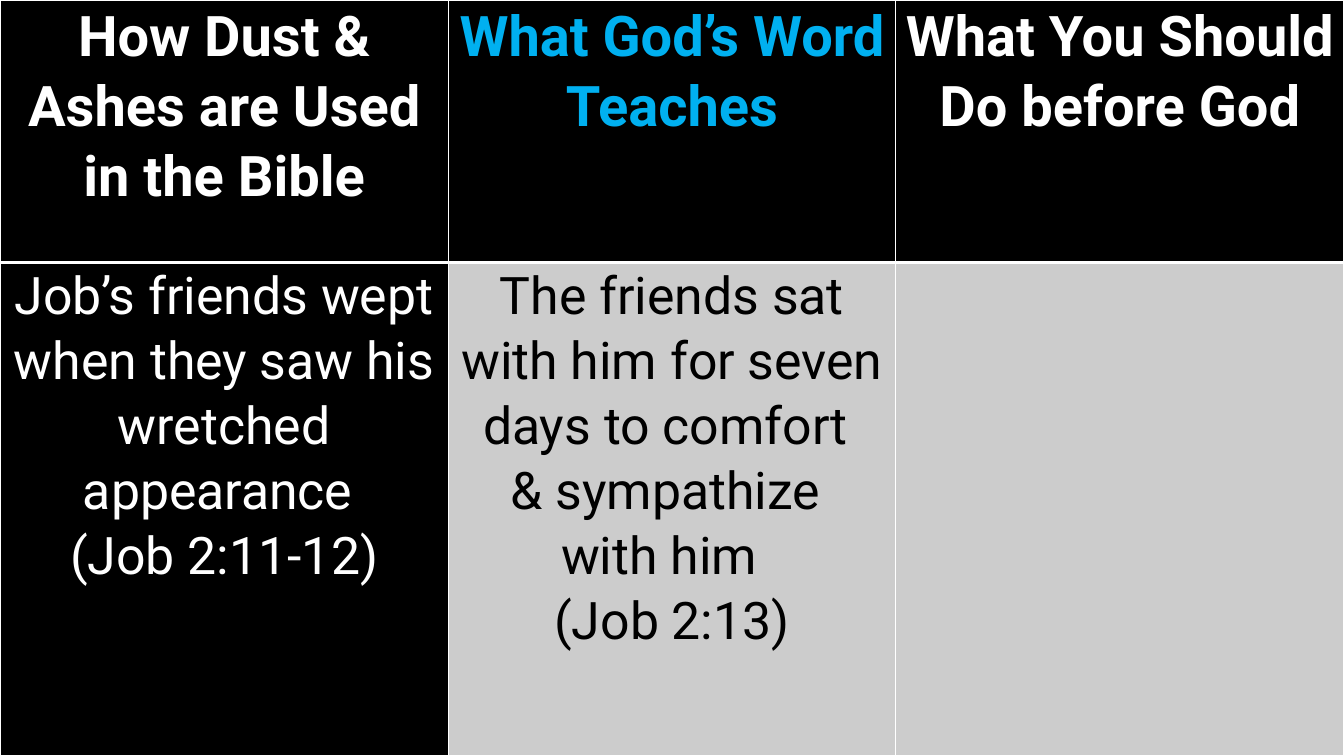
import lxml.etree
import pptx
import pptx.dml.color
import pptx.enum.text
import pptx.oxml.ns
import pptx.util

PX = 9525
SLIDE_WIDTH, SLIDE_HEIGHT = 1280, 720
HEADER_HEIGHT = 250
COLUMN_WIDTHS = [427, 426, 427]
BLACK, WHITE, BLUE, GREY = "000000", "FFFFFF", "00B0F0", "CCCCCC"

# Each cell: paragraphs, text colour, fill colour
HEADINGS = [
    (["How Dust & Ashes are Used in the Bible"], WHITE, BLACK),
    (["What God’s Word ", "Teaches"], BLUE, BLACK),
    (["What You Should Do before God"], WHITE, BLACK),
]
LESSONS = [
    (["Job’s friends wept when they saw his wretched appearance ",
      "(Job 2:11-12)"], WHITE, BLACK),
    (["The friends sat with him for seven days to comfort ", "& sympathize ",
      "with him  ", "(Job 2:13)"], BLACK, GREY),
    ([], BLACK, GREY),
]


def px(length):
    return pptx.util.Emu(length * PX)


def rgb(colour):
    return pptx.dml.color.RGBColor.from_string(colour)


def set_borders(cell, widths):
    """Draw white borders; widths maps L, R, T and B, in that order, to points."""
    properties = cell._tc.get_or_add_tcPr()
    qn = pptx.oxml.ns.qn
    for position, (side, width) in enumerate(widths.items()):
        border = lxml.etree.Element(qn(f"a:ln{side}"), w=str(pptx.util.Pt(width)))
        fill = lxml.etree.SubElement(border, qn("a:solidFill"))
        lxml.etree.SubElement(fill, qn("a:srgbClr"), val=WHITE)
        properties.insert(position, border)


def fill_cell(cell, paragraphs, text_colour, fill_colour, size, bold):
    cell.margin_left = cell.margin_right = px(7)
    cell.margin_top = cell.margin_bottom = 0
    cell.fill.solid()
    cell.fill.fore_color.rgb = rgb(fill_colour)
    cell.text_frame.text = "\n".join(paragraphs)
    for paragraph in cell.text_frame.paragraphs:
        paragraph.alignment = pptx.enum.text.PP_ALIGN.CENTER
        paragraph.line_spacing = 1.07
        for run in paragraph.runs:
            run.font.name = "Roboto"
            run.font.size = pptx.util.Pt(size)
            run.font.bold = bold
            run.font.color.rgb = rgb(text_colour)


def add_lesson_table(slide, left, top, width, height):
    table = slide.shapes.add_table(
        2, len(HEADINGS), px(left), px(top), px(width), px(height)).table
    for column, column_width in zip(table.columns, COLUMN_WIDTHS):
        column.width = px(column_width)
    table.rows[0].height = px(HEADER_HEIGHT)
    table.rows[1].height = px(height - HEADER_HEIGHT)
    row_styles = [
        (HEADINGS, 40, True, {"L": 1, "R": 1, "T": 1, "B": 3}),
        (LESSONS, 37, False, {"L": 1, "R": 1, "T": 3, "B": 1}),
    ]
    for row, (entries, size, bold, borders) in enumerate(row_styles):
        for column, entry in enumerate(entries):
            cell = table.cell(row, column)
            fill_cell(cell, *entry, size, bold)
            set_borders(cell, borders)


def main():
    presentation = pptx.Presentation()
    presentation.slide_width = px(SLIDE_WIDTH)
    presentation.slide_height = px(SLIDE_HEIGHT)
    slide = presentation.slides.add_slide(presentation.slide_layouts[6])
    slide.background.fill.solid()
    slide.background.fill.fore_color.rgb = rgb(BLACK)
    add_lesson_table(slide, 0, 0, SLIDE_WIDTH, SLIDE_HEIGHT)
    presentation.save("out.pptx")


if __name__ == "__main__":
    main()
